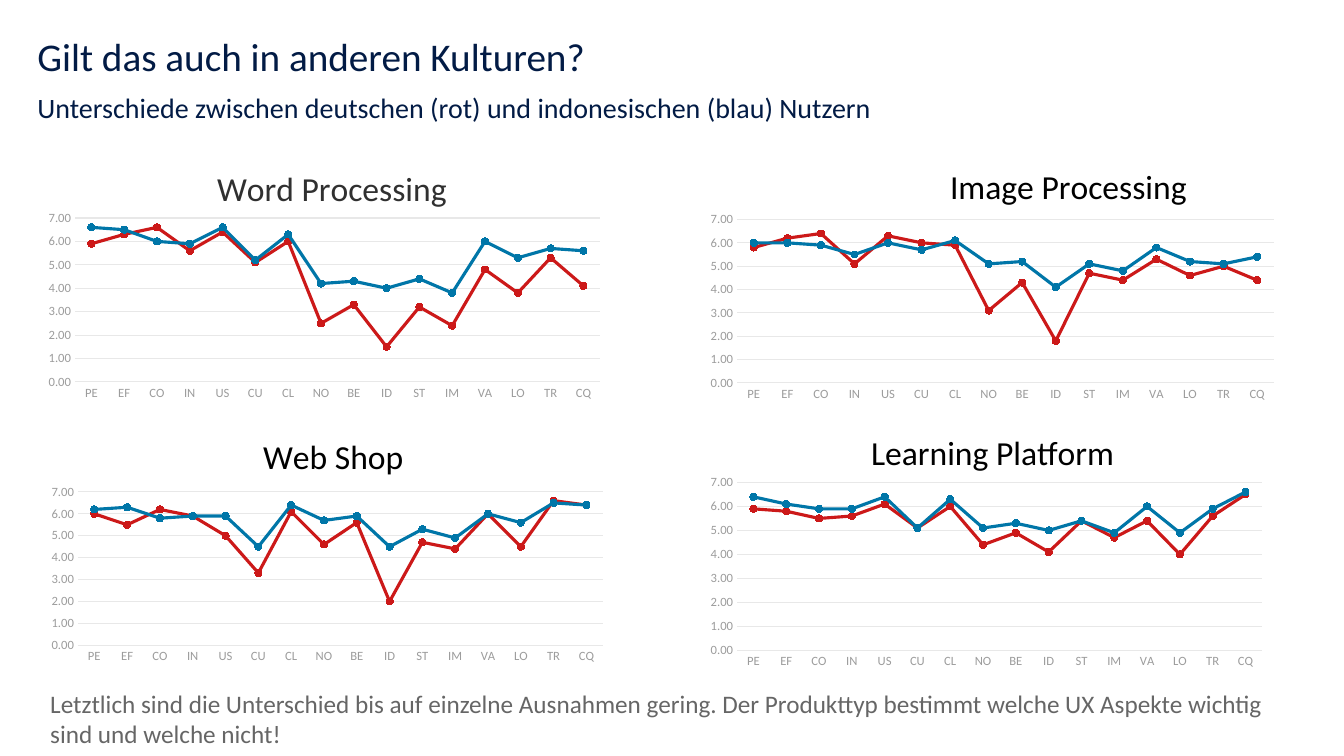
from dataclasses import dataclass
from typing import NamedTuple

from lxml import etree
from pptx import Presentation
from pptx.chart.data import CategoryChartData
from pptx.dml.color import RGBColor
from pptx.enum.chart import XL_CHART_TYPE as ChartType
from pptx.enum.chart import XL_MARKER_STYLE as MarkerStyle
from pptx.enum.chart import XL_TICK_MARK as TickMark
from pptx.enum.text import MSO_ANCHOR as Anchor
from pptx.enum.text import MSO_AUTO_SIZE as AutoSize
from pptx.enum.text import PP_ALIGN as Align
from pptx.oxml.ns import qn
from pptx.util import Inches, Pt

SLIDE_WIDTH, SLIDE_HEIGHT = Inches(13.333), Inches(7.5)
FONT = "Calibri"
COLORS = {
    "heading": "021B45",
    "body": "666666",
    "axis": "9C9C9C",
    "grid": "E8E8E8",
    "german": "CC1919",
    "indonesian": "0076A8",
    "dark": "303030",
    "black": "000000",
}
ASPECTS = "PE EF CO IN US CU CL NO BE ID ST IM VA LO TR CQ".split()


class Box(NamedTuple):
    """Percentages of the slide's width and height."""

    left: float
    top: float
    width: float
    height: float

    def lengths(self) -> list[int]:
        sides = (SLIDE_WIDTH, SLIDE_HEIGHT) * 2
        return [round(side * share / 100) for side, share in zip(sides, self)]


@dataclass
class Panel:
    title: str
    box: Box
    plot: Box
    title_left: float
    title_top: float
    german: list[float]
    indonesian: list[float]
    title_color: str = "black"


PANELS = [
    Panel("Word Processing", Box(2.78, 19.07, 42.75, 34.53),
          Box(5.58, 28.84, 39.06, 21.7), 15.7, 21.2,
          [5.9, 6.3, 6.6, 5.6, 6.4, 5.1, 6, 2.5, 3.3, 1.5, 3.2, 2.4, 4.8, 3.8, 5.3, 4.1],
          [6.6, 6.5, 6, 5.9, 6.6, 5.2, 6.3, 4.2, 4.3, 4, 4.4, 3.8, 6, 5.3, 5.7, 5.6],
          "dark"),
    Panel("Image Processing", Box(52.05, 19.2, 43.65, 34.53),
          Box(54.84, 29.04, 39.95, 21.63), 70.24, 20.9,
          [5.8, 6.2, 6.4, 5.1, 6.3, 6, 5.9, 3.1, 4.3, 1.8, 4.7, 4.4, 5.3, 4.6, 5, 4.4],
          [6, 6, 5.9, 5.5, 6, 5.7, 6.1, 5.1, 5.2, 4.1, 5.1, 4.8, 5.8, 5.2, 5.1, 5.4]),
    Panel("Learning Platform", Box(52.05, 54, 42.75, 35.2),
          Box(54.84, 63.83, 39.06, 22.22), 64.36, 56.1,
          [5.9, 5.8, 5.5, 5.6, 6.1, 5.1, 6, 4.4, 4.9, 4.1, 5.4, 4.7, 5.4, 4, 5.6, 6.5],
          [6.4, 6.1, 5.9, 5.9, 6.4, 5.1, 6.3, 5.1, 5.3, 5, 5.4, 4.9, 6, 4.9, 5.9, 6.6]),
    Panel("Web Shop", Box(3, 54, 42.75, 34.53),
          Box(5.8, 65.08, 39.06, 20.3), 19.12, 56.6,
          [6, 5.5, 6.2, 5.9, 5, 3.3, 6.1, 4.6, 5.6, 2, 4.7, 4.4, 6, 4.5, 6.6, 6.4],
          [6.2, 6.3, 5.8, 5.9, 5.9, 4.5, 6.4, 5.7, 5.9, 4.5, 5.3, 4.9, 6, 5.6, 6.5, 6.4]),
]


def rgb(name: str) -> RGBColor:
    return RGBColor.from_string(COLORS[name])


def style_font(font, size: float, color: str) -> None:
    font.name, font.size, font.bold = FONT, Pt(size), False
    font.color.rgb = rgb(color)


def write_text(frame, text: str, *, size: float, color: str, align=None,
               line_spacing=None, space_before=None):
    paragraph = frame.paragraphs[0]
    paragraph.alignment = align
    paragraph.line_spacing = line_spacing
    paragraph.space_before = space_before
    run = paragraph.add_run()
    run.text = text
    style_font(run.font, size, color)
    return paragraph


def place_placeholder(shape, box: Box, anchor: Anchor) -> None:
    """Move a placeholder and remove its insets and text fitting."""
    shape.left, shape.top, shape.width, shape.height = box.lengths()
    frame = shape.text_frame
    frame.margin_left = frame.margin_right = frame.margin_top = frame.margin_bottom = 0
    frame.vertical_anchor = anchor
    frame.auto_size = AutoSize.NONE
    frame.word_wrap = True


def set_layout(parent, position: int, settings: dict[str, object]) -> None:
    """Give a chart part a manual layout."""
    for old in parent.findall(qn("c:layout")):
        parent.remove(old)
    layout = etree.Element(qn("c:layout"))
    manual = etree.SubElement(layout, qn("c:manualLayout"))
    for tag, value in settings.items():
        etree.SubElement(manual, qn(f"c:{tag}")).set("val", str(value))
    parent.insert(position, layout)


def style_axes(chart) -> None:
    for axis in (chart.category_axis, chart.value_axis):
        axis.major_tick_mark = axis.minor_tick_mark = TickMark.NONE
        style_font(axis.tick_labels.font, 9, "axis")
    values = chart.value_axis
    values.minimum_scale, values.maximum_scale, values.major_unit = 0, 7, 1
    values.tick_labels.number_format = "0.00"
    values.tick_labels.number_format_is_linked = False
    values.format.line.fill.background()
    values.has_major_gridlines = True
    for line in (values.major_gridlines.format.line, chart.category_axis.format.line):
        line.color.rgb = rgb("grid")
        line.width = Pt(0.75)


def style_series(series, color: str) -> None:
    series.smooth = False
    series.format.line.color.rgb = rgb(color)
    series.format.line.width = Pt(2.25)
    marker = series.marker
    marker.style, marker.size = MarkerStyle.CIRCLE, 5
    marker.format.fill.solid()
    marker.format.fill.fore_color.rgb = rgb(color)
    marker.format.line.color.rgb = rgb(color)


def add_panel(slide, panel: Panel) -> None:
    data = CategoryChartData(number_format="0.0")
    data.categories = ASPECTS
    data.add_series("Series 1", panel.german)
    data.add_series("Series 2", panel.indonesian)
    chart = slide.shapes.add_chart(ChartType.LINE_MARKERS, *panel.box.lengths(), data).chart
    chart.has_legend = False
    style_font(chart.font, 10, "body")
    chart.plots[0].vary_by_categories = False
    style_axes(chart)
    for series, color in zip(chart.plots[0].series, ("german", "indonesian")):
        style_series(series, color)

    chart.has_title = True
    title = chart.chart_title
    write_text(title.text_frame, panel.title, size=24, color=panel.title_color)
    box, plot = panel.box, panel.plot
    set_layout(title._element, 1, {
        "xMode": "edge", "yMode": "edge",
        "x": (panel.title_left - box.left) / box.width,
        "y": (panel.title_top - box.top) / box.height,
    })
    set_layout(chart._chartSpace.chart.plotArea, 0, {
        "layoutTarget": "inner", "xMode": "edge", "yMode": "edge",
        "x": (plot.left - box.left) / box.width,
        "y": (plot.top - box.top) / box.height,
        "w": plot.width / box.width,
        "h": plot.height / box.height,
    })


def main() -> None:
    presentation = Presentation()
    presentation.slide_width, presentation.slide_height = SLIDE_WIDTH, SLIDE_HEIGHT
    slide = presentation.slides.add_slide(presentation.slide_layouts[1])

    title, subtitle = slide.shapes.title, slide.placeholders[1]
    place_placeholder(title, Box(2.78, 4.4, 94.5, 6.67), Anchor.MIDDLE)
    write_text(title.text_frame, "Gilt das auch in anderen Kulturen?",
               size=28, color="heading", align=Align.LEFT, line_spacing=0.9)
    place_placeholder(subtitle, Box(2.78, 12, 94.5, 4.4), Anchor.TOP)
    paragraph = write_text(
        subtitle.text_frame,
        "Unterschiede zwischen deutschen (rot) und indonesischen (blau) Nutzern",
        size=20, color="heading", align=Align.LEFT, space_before=Pt(10))
    properties = paragraph._p.get_or_add_pPr()
    properties.set("marL", "0")
    properties.set("indent", "0")
    etree.SubElement(properties, qn("a:buNone"))

    for panel in PANELS:
        add_panel(slide, panel)

    conclusion = slide.shapes.add_textbox(*Box(3, 90.4, 92.7, 9.47).lengths()).text_frame
    conclusion.word_wrap = True
    conclusion.auto_size = AutoSize.SHAPE_TO_FIT_TEXT
    write_text(conclusion, "Letztlich sind die Unterschied bis auf einzelne Ausnahmen gering. "
               "Der Produkttyp bestimmt welche UX Aspekte wichtig sind und welche nicht!",
               size=18, color="body")
    presentation.save("out.pptx")


if __name__ == "__main__":
    main()
